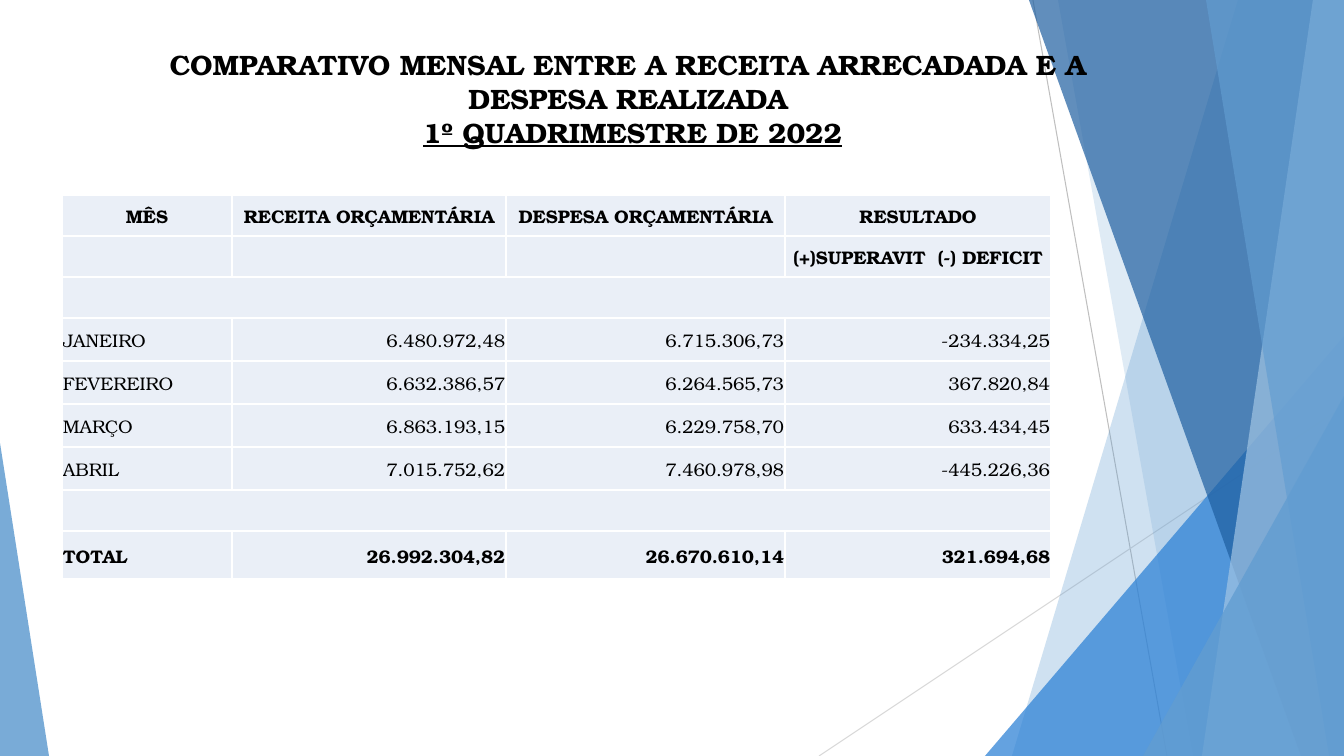
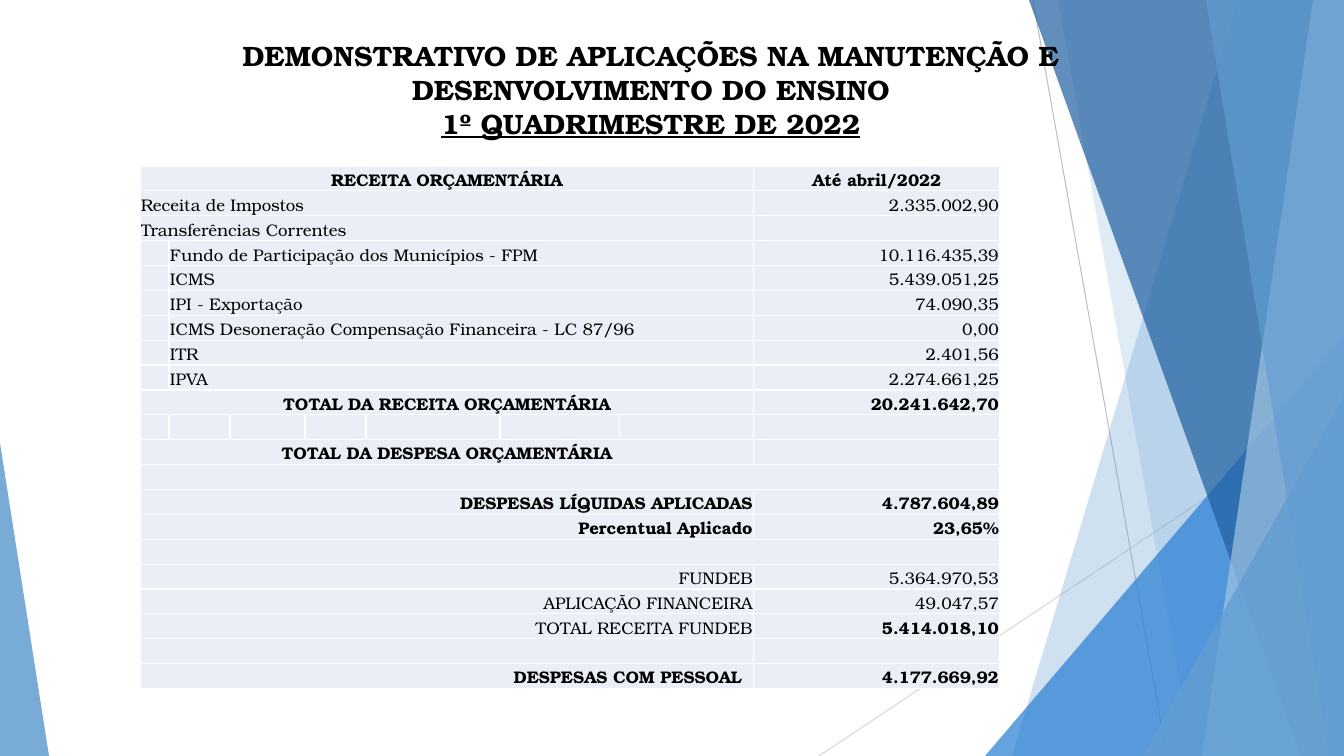
"""Build two budget report slides, each with a title and a table over a blue backdrop."""
from dataclasses import dataclass
from lxml.etree import SubElement
from pptx import Presentation
from pptx.dml.color import RGBColor
from pptx.enum.shapes import MSO_CONNECTOR, MSO_SHAPE
from pptx.enum.text import MSO_ANCHOR, PP_ALIGN
from pptx.oxml.ns import qn
from pptx.util import Emu, Pt

SCALE = 914400 / 100.8
WIDE, HIGH = 1344, 756
FONT = "TeX Gyre Bonum"
BLACK = RGBColor(0x00, 0x00, 0x00)
WHITE = RGBColor(0xFF, 0xFF, 0xFF)
PALE = RGBColor(0xEA, 0xEF, 0xF7)
SKY = RGBColor(0x62, 0x9D, 0xD1)
MIST = RGBColor(0xA1, 0xC4, 0xE3)
AZURE = RGBColor(0x29, 0x7F, 0xD5)
NAVY = RGBColor(0x1F, 0x5F, 0xA0)
SILVER = RGBColor(0xBF, 0xBF, 0xBF)
ASH = RGBColor(0xD9, 0xD9, 0xD9)
LEFT, MID, RIGHT = PP_ALIGN.LEFT, PP_ALIGN.CENTER, PP_ALIGN.RIGHT

RAYS = [(1033, 0, 1167, HIGH, SILVER), (WIDE, 406, 819, HIGH, ASH)]
SHARDS = [
    ("band", (1238, 1012), SKY, 30),
    ("band", (1058, 1193), SKY, 20),
    ("wedge", (985, 336, 359, 420, 1), AZURE, 72),
    ("band", (1029, 1301), NAVY, 70),
    ("band", (1313, 1202), MIST, 70),
    ("band", (1206, 1329), SKY, 65),
    ("wedge", (1143, 396, 201, 360, 1), SKY, 80),
    ("wedge", (0, 443, 49, 313, 0), SKY, 85),
]


@dataclass
class Cell:
    """One table cell, with the number of columns it covers."""
    text: str = ""
    align: PP_ALIGN = LEFT
    bold: bool = False
    span: int = 1
    pad: int = 1


def px(n):
    """Turn pixels into EMU."""
    return Emu(round(n * SCALE))


def write(para, text, size=12, bold=False, under=False, align=LEFT):
    """Add formatted text to a paragraph, or size the paragraph if it is empty."""
    para.alignment = align
    if not text:
        para._p.get_or_add_endParaRPr().set("sz", str(size * 100))
        return
    run = para.add_run()
    run.text = text
    font = run.font
    font.name, font.size, font.bold, font.underline = FONT, Pt(size), bold, under
    font.color.rgb = BLACK


def paint(shape, color, alpha):
    """Fill a shape with a see-through colour and no outline."""
    shape.shadow.inherit = False
    shape.line.fill.background()
    shape.fill.solid()
    shape.fill.fore_color.rgb = color
    tint = shape.fill._xPr.find(".//" + qn("a:srgbClr"))
    SubElement(tint, qn("a:alpha"), val=str(alpha * 1000))


def band(slide, top, foot):
    """Draw a band from a slanted left edge to the right side of the slide."""
    pen = slide.shapes.build_freeform(top, 0, scale=SCALE)
    pen.add_line_segments([(WIDE, 0), (WIDE, HIGH), (foot, HIGH)])
    return pen.convert_to_shape()


def wedge(slide, x, y, w, h, tip):
    """Draw a triangle with its tip at the left (0) or right (1)."""
    shape = slide.shapes.add_shape(MSO_SHAPE.ISOSCELES_TRIANGLE, px(x), px(y), px(w), px(h))
    shape.adjustments[0] = tip
    return shape


def backdrop(slide):
    """Draw the thin rays and the blue shards."""
    for x, y, right, foot, color in RAYS:
        ray = slide.shapes.add_connector(MSO_CONNECTOR.STRAIGHT, px(x), px(y), px(right), px(foot))
        ray.line.color.rgb = color
        ray.line.width = Pt(0.75)
        SubElement(ray._element.spPr, qn("a:effectLst"))
    draw = {"band": band, "wedge": wedge}
    for kind, place, color, alpha in SHARDS:
        paint(draw[kind](slide, *place), color, alpha)


def title(slide, box, head, lead=""):
    """Write the bold title, with the period underlined on its own line."""
    frame = slide.shapes.add_textbox(*map(px, box)).text_frame
    frame.word_wrap = True
    para = frame.paragraphs[0]
    style = dict(size=20, bold=True, align=MID)
    write(para, head, **style)
    para.add_line_break()
    if lead:
        write(para, lead, **style)
    write(para, "1º QUADRIMESTRE DE 2022", under=True, **style)


def dress(cell, anchor):
    """Give a cell white borders, a pale fill and tight margins."""
    props = cell._tc.get_or_add_tcPr()
    for side in ("lnL", "lnR", "lnT", "lnB"):
        edge = SubElement(props, qn("a:" + side), w=str(Pt(1)))
        SubElement(SubElement(edge, qn("a:solidFill")), qn("a:srgbClr"), val=str(WHITE))
    cell.fill.solid()
    cell.fill.fore_color.rgb = PALE
    cell.vertical_anchor = anchor
    cell.margin_left = cell.margin_right = cell.margin_top = px(1)
    cell.margin_bottom = 0


def grid(slide, x, y, cols, highs, rows, size, anchor):
    """Place a table with its top left corner at x, y."""
    table = slide.shapes.add_table(
        len(highs), len(cols), px(x), px(y), px(sum(cols)), px(sum(highs))).table
    table.first_row = table.horz_banding = False
    for col, wide in zip(table.columns, cols):
        col.width = px(wide)
    for row, high in zip(table.rows, highs):
        row.height = px(high)
    for cell in table.iter_cells():
        dress(cell, anchor)
        write(cell.text_frame.paragraphs[0], "", size=size)
    for r, row in enumerate(rows):
        c = 0
        for item in row:
            cell = table.cell(r, c)
            if item.span > 1:
                cell.merge(table.cell(r, c + item.span - 1))
            cell.margin_right = px(item.pad)
            write(cell.text_frame.paragraphs[0], item.text,
                  size=size, bold=item.bold, align=item.align)
            c += item.span


def month(name, *sums, bold=False):
    """Return a row with a name and its sums."""
    return [Cell(name, bold=bold)] + [Cell(s, RIGHT, bold) for s in sums]


def entry(name, value="", align=LEFT, bold=False, strong=None, pad=1):
    """Return a row with a label over seven columns and a value."""
    strong = bold if strong is None else strong
    return [Cell(name, align, bold, 7, pad), Cell(value, RIGHT, strong)]


def item(name, value):
    """Return a row whose label is one column in."""
    return [Cell(), Cell(name, span=6), Cell(value, RIGHT)]


def balance(slide):
    """Build the slide that compares revenue and spending by month."""
    backdrop(slide)
    title(slide, (145, 43, 966, 170),
          "COMPARATIVO MENSAL ENTRE A RECEITA ARRECADADA E A DESPESA REALIZADA", lead=" ")
    heads = ("MÊS", "RECEITA ORÇAMENTÁRIA", "DESPESA ORÇAMENTÁRIA", "RESULTADO")
    rows = [
        [Cell(h, MID, True) for h in heads],
        [Cell(), Cell(), Cell(), Cell("(+)SUPERAVIT  (-) DEFICIT", MID, True)],
        [Cell(span=4)],
        month("JANEIRO", "6.480.972,48", "6.715.306,73", "-234.334,25"),
        month("FEVEREIRO", "6.632.386,57", "6.264.565,73", "367.820,84"),
        month("MARÇO", "6.863.193,15", "6.229.758,70", "633.434,45"),
        month("ABRIL", "7.015.752,62", "7.460.978,98", "-445.226,36"),
        [Cell(span=4)],
        month("TOTAL", "26.992.304,82", "26.670.610,14", "321.694,68", bold=True),
    ]
    highs = [41] * 3 + [43] * 4 + [41, 48]
    grid(slide, 62, 195, [170, 274, 279, 266], highs, rows, 13, MSO_ANCHOR.MIDDLE)


def schooling(slide):
    """Build the slide on the funds applied to education."""
    backdrop(slide)
    title(slide, (177, 34, 948, 145),
          "DEMONSTRATIVO DE APLICAÇÕES NA MANUTENÇÃO E DESENVOLVIMENTO DO ENSINO")
    rows = [
        [Cell("RECEITA ORÇAMENTÁRIA", MID, True, 7), Cell("Até abril/2022", MID, True)],
        entry("Receita de Impostos", "2.335.002,90"),
        entry("Transferências Correntes"),
        item("Fundo de Participação dos Municípios - FPM", "10.116.435,39"),
        item("ICMS", "5.439.051,25"),
        item("IPI - Exportação", "74.090,35"),
        item("ICMS Desoneração Compensação Financeira - LC 87/96", "0,00"),
        item("ITR", "2.401,56"),
        item("IPVA", "2.274.661,25"),
        entry("TOTAL DA RECEITA ORÇAMENTÁRIA", "20.241.642,70", MID, True),
        [Cell()] * 8,
        entry("TOTAL DA DESPESA ORÇAMENTÁRIA", "", MID, True),
        [Cell(span=8)],
        entry("DESPESAS LÍQUIDAS APLICADAS", "4.787.604,89", RIGHT, True),
        entry("Percentual Aplicado", "23,65%", RIGHT, True),
        [Cell(span=8)],
        entry("FUNDEB", "5.364.970,53", RIGHT),
        entry("APLICAÇÃO FINANCEIRA", "49.047,57", RIGHT),
        entry("TOTAL RECEITA FUNDEB", "5.414.018,10", RIGHT, strong=True),
        entry(""),
        entry("DESPESAS COM PESSOAL", "4.177.669,92", RIGHT, True, pad=12),
    ]
    cols = [29, 61, 75, 61, 134, 120, 134, 246]
    highs = [523 / len(rows)] * len(rows)
    grid(slide, 140, 166, cols, highs, rows, 12, MSO_ANCHOR.BOTTOM)


def main():
    """Build and save the deck."""
    deck = Presentation()
    deck.slide_width, deck.slide_height = px(WIDE), px(HIGH)
    for build in (balance, schooling):
        build(deck.slides.add_slide(deck.slide_layouts[6]))
    deck.save("out.pptx")


if __name__ == "__main__":
    main()
